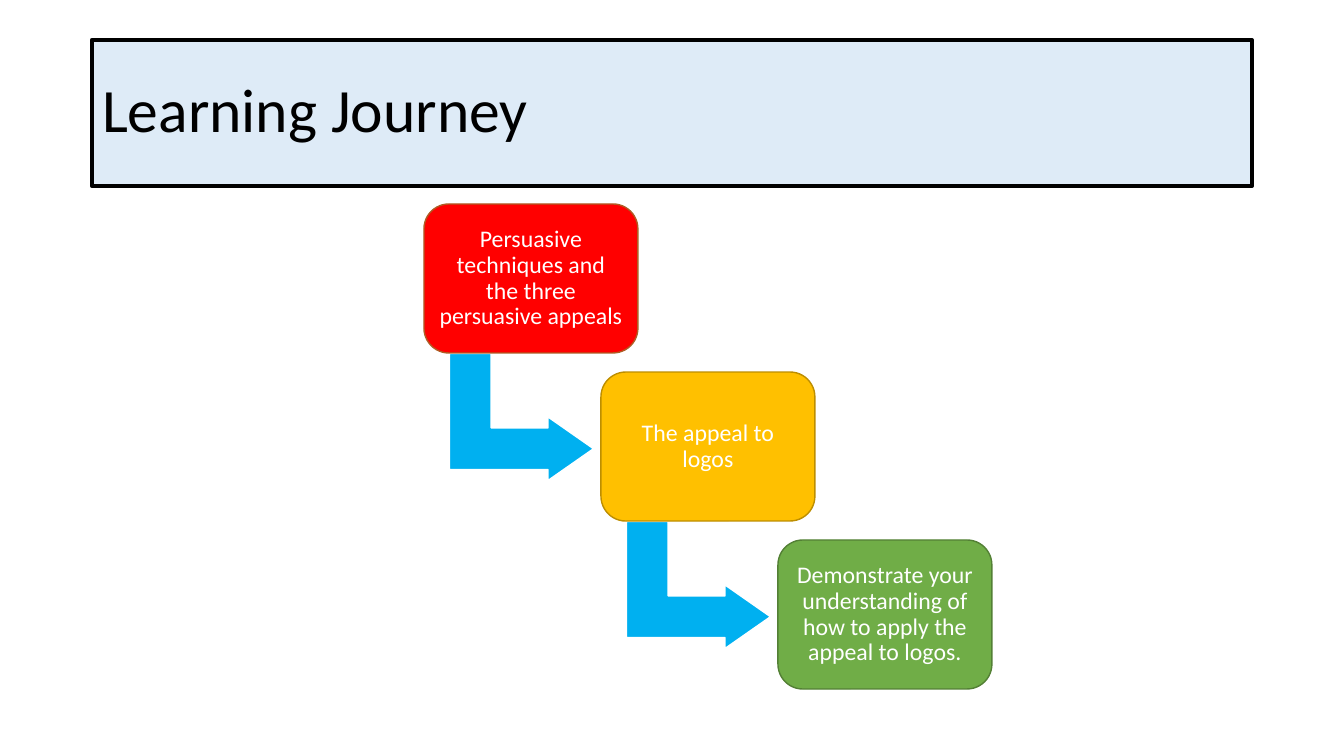
from pptx import Presentation
from pptx.dml.color import RGBColor
from pptx.enum.shapes import MSO_SHAPE as Shape
from pptx.enum.text import MSO_ANCHOR as Anchor, MSO_AUTO_SIZE as AutoSize, PP_ALIGN as Align
from pptx.util import Pt

EMU_PER_PX = 914400 / 100.8
FONT = "Calibri"
CARD_LEFT, CARD_TOP, CARD_WIDTH, CARD_HEIGHT = 424, 204, 214, 149
STEP_X, STEP_Y = 177, 168
STAGES = [
    ("Persuasive techniques and the three persuasive appeals", "FF0000", "AF5C24"),
    ("The appeal to logos", "FFC000", "BD8E00"),
    ("Demonstrate your understanding of how to apply the appeal to logos.", "70AD47", "538035"),
]


def px(length):
    """Turn pixels into EMU."""
    return round(length * EMU_PER_PX)


def color(value):
    """Turn a hex string into a colour."""
    return RGBColor.from_string(value)


def paint(shape, fill, line, weight):
    """Set the fill and outline of a shape."""
    shape.fill.solid()
    shape.fill.fore_color.rgb = color(fill)
    shape.line.color.rgb = color(line)
    shape.line.width = Pt(weight)


def write(shape, text, size, ink, align):
    """Put one formatted paragraph in the middle of a shape."""
    frame = shape.text_frame
    frame.text = text
    frame.word_wrap = True
    frame.auto_size = AutoSize.NONE
    frame.vertical_anchor = Anchor.MIDDLE
    para = frame.paragraphs[0]
    para.alignment = align
    para.line_spacing = 0.9
    font = para.runs[0].font
    font.name, font.size = FONT, Pt(size)
    font.color.rgb = color(ink)


def add_title(page, text):
    """Place the framed title."""
    title = page.shapes.title
    title.left, title.top, title.width, title.height = map(px, (92, 40, 1160, 146))
    paint(title, "DEEBF7", "000000", 3)
    write(title, text, 44, "000000", Align.LEFT)


def add_preset(page, kind, left, top, width, height, adjustments):
    """Add a preset shape without a shadow."""
    shape = page.shapes.add_shape(kind, *map(px, (left, top, width, height)))
    shape.shadow.inherit = False
    for index, value in enumerate(adjustments):
        shape.adjustments[index] = value
    return shape


def add_arrow(page, card_left, card_top):
    """Add the bent arrow leading on from a card."""
    arrow = add_preset(page, Shape.BENT_UP_ARROW, card_left + 34, card_top + 141,
                       127, 144, (0.328, 0.25, 0.358))
    arrow.rotation = 90
    paint(arrow, "00B0F0", "FFFFFF", 1)


def add_card(page, left, top, text, fill, line):
    """Add a rounded card with its stage text."""
    card = add_preset(page, Shape.ROUNDED_RECTANGLE, left, top,
                      CARD_WIDTH, CARD_HEIGHT, (0.167,))
    paint(card, fill, line, 1)
    write(card, text, 17, "FFFFFF", Align.CENTER)
    frame = card.text_frame
    frame.margin_left = frame.margin_right = px(7)
    frame.margin_top = frame.margin_bottom = px(7)


def main():
    """Build the learning journey slide."""
    deck = Presentation()
    deck.slide_width, deck.slide_height = px(1344), px(756)
    page = deck.slides.add_slide(deck.slide_layouts[5])
    add_title(page, "Learning Journey")
    for index, (text, fill, line) in enumerate(STAGES):
        left, top = CARD_LEFT + index * STEP_X, CARD_TOP + index * STEP_Y
        if index < len(STAGES) - 1:
            add_arrow(page, left, top)
        add_card(page, left, top, text, fill, line)
    deck.save("out.pptx")


if __name__ == "__main__":
    main()
